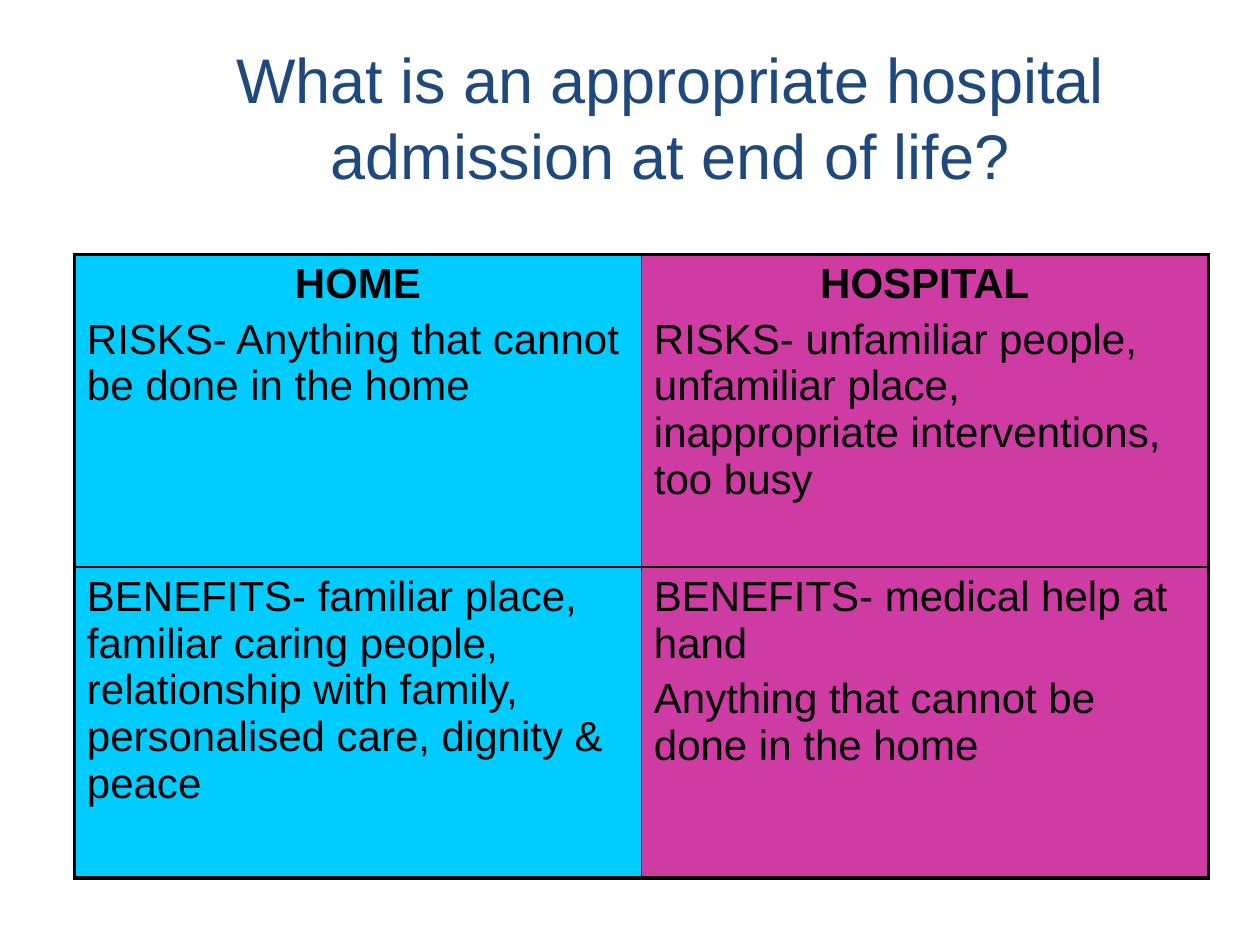
from lxml.etree import SubElement
from pptx import Presentation
from pptx.dml.color import RGBColor
from pptx.enum.text import MSO_ANCHOR, PP_ALIGN
from pptx.oxml.ns import qn
from pptx.util import Inches, Pt

NAVY = RGBColor(0x1F, 0x49, 0x7D)
BLACK = RGBColor(0x00, 0x00, 0x00)
CYAN = RGBColor(0x00, 0xCC, 0xFF)
MAGENTA = RGBColor(0xCD, 0x3B, 0xA3)

TITLE_FORMAT = {"name": "Arial", "size": Pt(36), "bold": False}
BODY_FORMAT = {"name": "Arial", "size": Pt(24), "bold": False}
HEADING_FORMAT = {**BODY_FORMAT, "bold": True}

OUTER_LINE, INNER_LINE = Pt(2.25), Pt(1)
COLUMN_FILLS = [CYAN, MAGENTA]
COLUMN_WIDTHS = [4.5, 4.5]
ROW_HEIGHTS = [2.48, 2.47]
HEADINGS = ["HOME", "HOSPITAL"]
CELL_TEXTS = [
    [
        ["RISKS- Anything that cannot be done in the home"],
        ["RISKS- unfamiliar people, unfamiliar place, "
         "inappropriate interventions, too busy"],
    ],
    [
        ["BENEFITS- familiar place, familiar caring people, relationship "
         "with family, personalised care, dignity & peace"],
        ["BENEFITS- medical help at hand",
         "Anything that cannot be done in the home"],
    ],
]


def write_paragraph(paragraph, text, font_format, color, alignment):
    paragraph.alignment = alignment
    run = paragraph.add_run()
    run.text = text
    for name, value in font_format.items():
        setattr(run.font, name, value)
    run.font.color.rgb = color


def add_title(slide, text):
    box = slide.shapes.add_textbox(Inches(1.14), Inches(0.3), Inches(8.36), Inches(1.25))
    frame = box.text_frame
    frame.word_wrap = True
    frame.vertical_anchor = MSO_ANCHOR.MIDDLE
    write_paragraph(frame.paragraphs[0], text, TITLE_FORMAT, NAVY, PP_ALIGN.CENTER)


def set_borders(cell, widths):
    properties = cell._tc.get_or_add_tcPr()
    for side, width in widths.items():
        line = SubElement(properties, qn(f"a:ln{side}"), w=str(width))
        fill = SubElement(line, qn("a:solidFill"))
        SubElement(fill, qn("a:srgbClr"), val=str(BLACK))


def fill_cell(cell, heading, texts, color):
    # Borders come before the fill in the cell properties
    cell.fill.solid()
    cell.fill.fore_color.rgb = color
    frame = cell.text_frame
    entries = [(text, BODY_FORMAT, PP_ALIGN.LEFT) for text in texts]
    if heading:
        entries.insert(0, (heading, HEADING_FORMAT, PP_ALIGN.CENTER))
    for index, (text, font_format, alignment) in enumerate(entries):
        paragraph = frame.add_paragraph() if index else frame.paragraphs[0]
        if index:
            paragraph.space_before = Pt(4.8)
        write_paragraph(paragraph, text, font_format, BLACK, alignment)


def add_comparison_table(slide):
    rows, columns = len(ROW_HEIGHTS), len(COLUMN_WIDTHS)
    table = slide.shapes.add_table(
        rows, columns, Inches(0.59), Inches(2.02),
        Inches(sum(COLUMN_WIDTHS)), Inches(sum(ROW_HEIGHTS)),
    ).table
    table.first_row = False
    table.horz_banding = False
    for column, width in zip(table.columns, COLUMN_WIDTHS):
        column.width = Inches(width)
    for row, height in zip(table.rows, ROW_HEIGHTS):
        row.height = Inches(height)

    # Heavy frame outside, thin lines inside
    for row in range(rows):
        for column in range(columns):
            cell = table.cell(row, column)
            on_edge = {"L": column == 0, "R": column == columns - 1,
                       "T": row == 0, "B": row == rows - 1}
            set_borders(cell, {side: OUTER_LINE if outer else INNER_LINE
                               for side, outer in on_edge.items()})
            heading = HEADINGS[column] if row == 0 else None
            fill_cell(cell, heading, CELL_TEXTS[row][column], COLUMN_FILLS[column])


def main():
    presentation = Presentation()
    presentation.slide_width = Inches(10)
    presentation.slide_height = Inches(7.5)
    slide = presentation.slides.add_slide(presentation.slide_layouts[6])
    add_title(slide, "What is an appropriate hospital admission at end of life?")
    add_comparison_table(slide)
    presentation.save("out.pptx")


if __name__ == "__main__":
    main()
